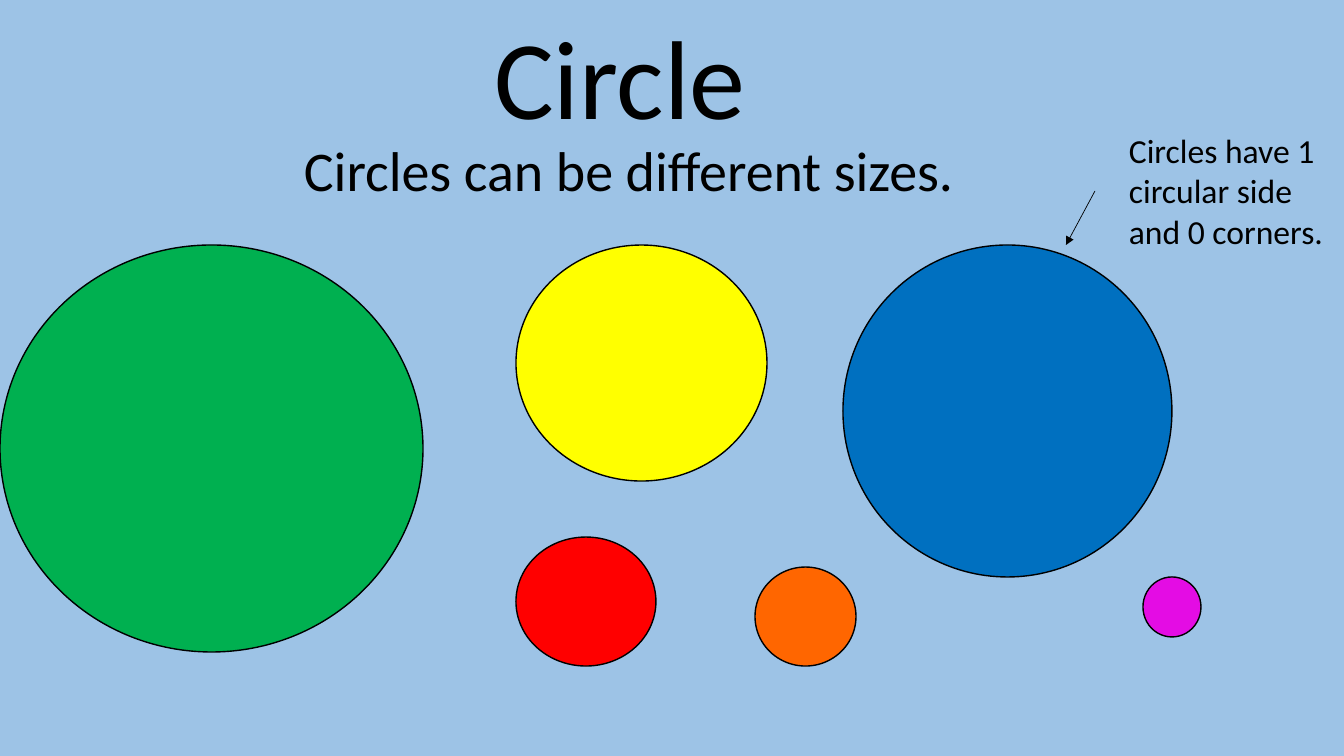
from lxml import etree
from pptx import Presentation
from pptx.dml.color import RGBColor
from pptx.enum import shapes, text
from pptx.oxml import ns
from pptx.util import Pt

EMU_PER_PX = 914400 / 100.8
SLIDE_SIZE = (1344, 756)
TITLE_ONLY = 5

SKY = RGBColor(0x9D, 0xC3, 0xE6)
BLACK = RGBColor(0x00, 0x00, 0x00)
YELLOW = RGBColor(0xFF, 0xFF, 0x00)
GREEN = RGBColor(0x00, 0xB0, 0x50)
RED = RGBColor(0xFF, 0x00, 0x00)
BLUE = RGBColor(0x00, 0x70, 0xC0)
ORANGE = RGBColor(0xFF, 0x66, 0x00)
MAGENTA = RGBColor(0xE4, 0x0C, 0xE4)

ROW_TOP = 245
MIDDLE_LEFT = 516
CIRCLES = [
    (MIDDLE_LEFT, ROW_TOP, 251, 236, YELLOW),
    (0, ROW_TOP, 423, 407, GREEN),
    (MIDDLE_LEFT, 537, 140, 129, RED),
    (843, ROW_TOP, 329, 332, BLUE),
    (755, 567, 101, 99, ORANGE),
    (1143, 577, 58, 60, MAGENTA),
]


def emu(*lengths):
    return [round(length * EMU_PER_PX) for length in lengths]


class CircleSlide:
    font = "Calibri"
    ink = BLACK

    def __init__(self, presentation):
        presentation.slide_width, presentation.slide_height = emu(*SLIDE_SIZE)
        self.slide = presentation.slides.add_slide(presentation.slide_layouts[TITLE_ONLY])
        background = self.slide.background.fill
        background.solid()
        background.fore_color.rgb = SKY

    def set_words(self, shape, words, size, align, wrap):
        frame = shape.text_frame
        frame.word_wrap = wrap
        frame.auto_size = text.MSO_AUTO_SIZE.NONE
        frame.vertical_anchor = text.MSO_ANCHOR.TOP
        paragraph = frame.paragraphs[0]
        paragraph.alignment = align
        run = paragraph.add_run()
        run.text = words
        run.font.name = self.font
        run.font.size = Pt(size)
        run.font.color.rgb = self.ink

    def title(self, left, top, width, height, words, size):
        shape = self.slide.shapes.title
        shape.left, shape.top, shape.width, shape.height = emu(left, top, width, height)
        self.set_words(shape, words, size, text.PP_ALIGN.CENTER, wrap=False)

    def label(self, left, top, width, height, words, size):
        shape = self.slide.shapes.add_textbox(*emu(left, top, width, height))
        self.set_words(shape, words, size, text.PP_ALIGN.LEFT, wrap=True)

    def circle(self, left, top, width, height, color):
        shape = self.slide.shapes.add_shape(
            shapes.MSO_SHAPE.OVAL, *emu(left, top, width, height))
        shape.shadow.inherit = False
        shape.fill.solid()
        shape.fill.fore_color.rgb = color
        shape.line.color.rgb = self.ink
        shape.line.width = Pt(1)

    def arrow(self, start_x, start_y, end_x, end_y):
        connector = self.slide.shapes.add_connector(
            shapes.MSO_CONNECTOR.STRAIGHT, *emu(start_x, start_y, end_x, end_y))
        connector.line.color.rgb = self.ink
        connector.line.width = Pt(0.5)
        properties = connector.element.spPr
        outline = properties.find(ns.qn("a:ln"))
        etree.SubElement(outline, ns.qn("a:tailEnd"), type="triangle")
        etree.SubElement(properties, ns.qn("a:effectLst"))


def main():
    presentation = Presentation()
    slide = CircleSlide(presentation)
    slide.title(483, 2, 274, 146, "Circle", 80)
    slide.label(294, 131, 1151, 78, "Circles can be different sizes.", 40)
    for circle in CIRCLES:
        slide.circle(*circle)
    slide.arrow(1095, 191, 1066, ROW_TOP)
    slide.label(1119, 125, 237, 132, "Circles have 1 circular side and 0 corners.", 24)
    presentation.save("out.pptx")


if __name__ == "__main__":
    main()
